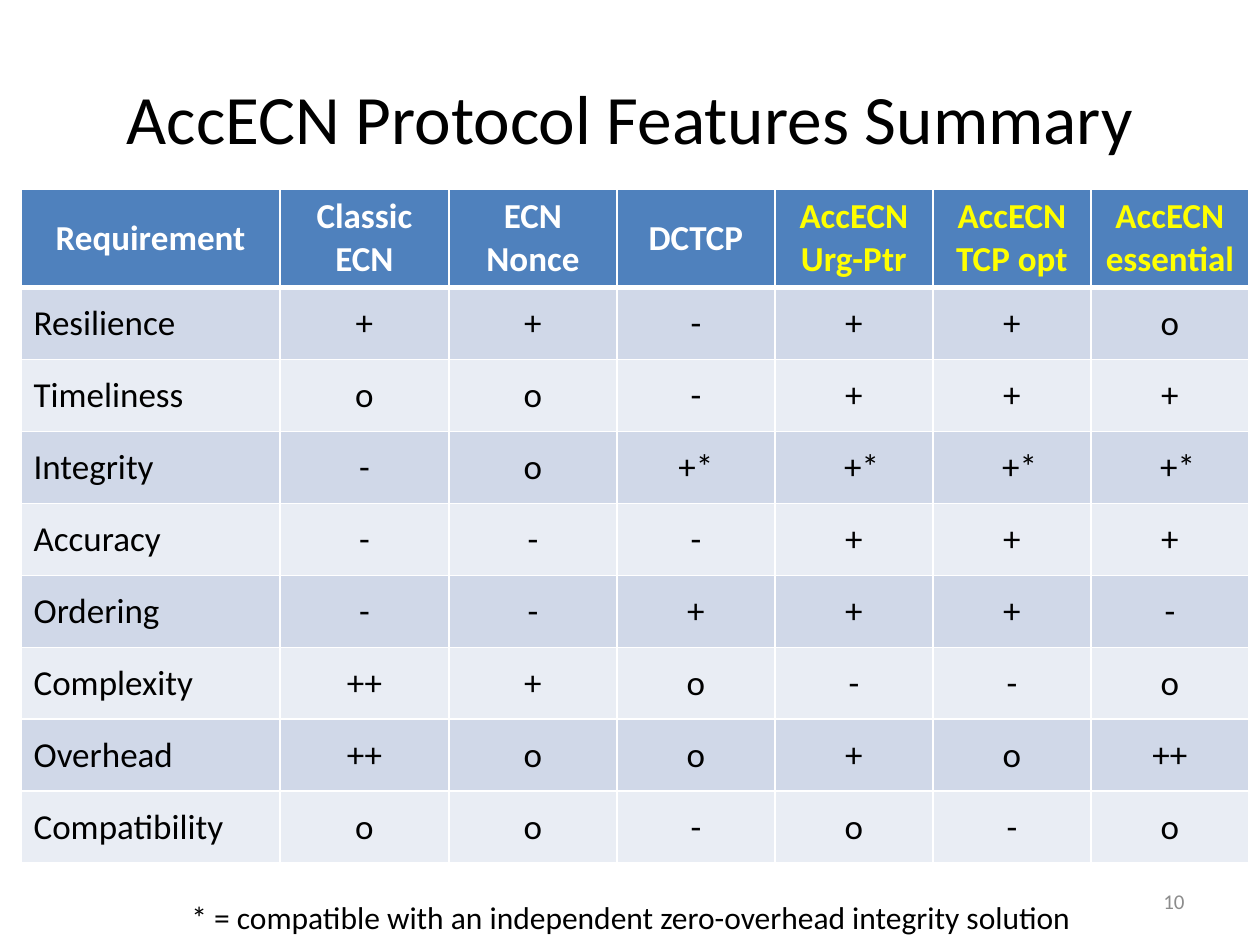
"""Build the AccECN protocol features summary slide."""
from lxml import etree
from pptx import Presentation
from pptx import util as u
from pptx.dml.color import RGBColor
from pptx.enum import text
from pptx.oxml.ns import qn

TITLE = "AccECN Protocol Features Summary"
FOOTNOTE = "* = compatible with an independent zero-overhead integrity solution"
PAGE_NUMBER = "10"
HEADINGS = ["Requirement", "Classic ECN", "ECN Nonce", "DCTCP",
            "AccECN\vUrg-Ptr", "AccECN\vTCP opt", "AccECN\vessential"]
RATINGS = [
    ("Resilience", "+", "+", "-", "+", "+", "o"),
    ("Timeliness", "o", "o", "-", "+", "+", "+"),
    ("Integrity", "-", "o", "+*", "+*", "+*", "+*"),
    ("Accuracy", "-", "-", "-", "+", "+", "+"),
    ("Ordering", "-", "-", "+", "+", "+", "-"),
    ("Complexity", "++", "+", "o", "-", "-", "o"),
    ("Overhead", "++", "o", "o", "+", "o", "++"),
    ("Compatibility", "o", "o", "-", "o", "-", "o"),
]
COLUMN_WIDTHS = [259, 169, 168] + [158] * 4
HEADING_HEIGHT, RATING_HEIGHT = 98, 72
FIRST_ACCECN = 4
STARRED_INDENT = 28

BLACK = RGBColor(0x00, 0x00, 0x00)
WHITE = RGBColor(0xFF, 0xFF, 0xFF)
YELLOW = RGBColor(0xFF, 0xFF, 0x00)
GREY = RGBColor(0x8C, 0x8C, 0x8C)
BLUE = RGBColor(0x4F, 0x81, 0xBD)
BANDS = [RGBColor(0xD0, 0xD8, 0xE8), RGBColor(0xE9, 0xED, 0xF4)]

LEFT, CENTER, RIGHT = (text.PP_ALIGN.LEFT, text.PP_ALIGN.CENTER,
                       text.PP_ALIGN.RIGHT)
MIDDLE = text.MSO_ANCHOR.MIDDLE


def px(*lengths):
    return [u.Emu(round(length * 914400 / 126)) for length in lengths]


def write(frame, words, size=20, color=BLACK, bold=False, align=LEFT):
    paragraph = frame.paragraphs[0]
    paragraph.text = words
    paragraph.alignment = align
    for run in paragraph.runs:
        run.font.name = "Calibri"
        run.font.size = u.Pt(size)
        run.font.bold = bold
        run.font.color.rgb = color


def add_borders(cell, **points):
    properties = cell._tc.get_or_add_tcPr()
    for side in "LRTB":
        line = etree.SubElement(properties, qn(f"a:ln{side}"),
                                w=str(u.Pt(points.get(side, 1))))
        fill = etree.SubElement(line, qn("a:solidFill"))
        etree.SubElement(fill, qn("a:srgbClr"), val=str(WHITE))


def add_ratings(slide):
    heights = [HEADING_HEIGHT] + [RATING_HEIGHT] * len(RATINGS)
    table = slide.shapes.add_table(
        len(heights), len(HEADINGS),
        *px(21, 189, sum(COLUMN_WIDTHS), sum(heights))).table
    for column, width in zip(table.columns, px(*COLUMN_WIDTHS)):
        column.width = width
    for row, height in zip(table.rows, px(*heights)):
        row.height = height
    for r, entries in enumerate([HEADINGS] + RATINGS):
        for c, entry in enumerate(entries):
            cell = table.cell(r, c)
            cell.vertical_anchor = MIDDLE
            add_borders(cell, T=3 if r == 1 else 1, B=3 if r == 0 else 1)
            cell.fill.solid()
            cell.fill.fore_color.rgb = BANDS[(r - 1) % 2] if r else BLUE
            if r == 0:
                write(cell.text_frame, entry, bold=True, align=CENTER,
                      color=YELLOW if c >= FIRST_ACCECN else WHITE)
            else:
                write(cell.text_frame, entry, align=CENTER if c else LEFT)
            if entry == "+*" and c >= FIRST_ACCECN:
                cell.margin_left, = px(STARRED_INDENT)


def main():
    deck = Presentation()
    deck.slide_width, deck.slide_height = px(1260, 945)
    slide = deck.slides.add_slide(deck.slide_layouts[5])

    title = slide.shapes.title
    title.left, title.top, title.width, title.height = px(63, 38, 1134, 157)
    title.text_frame.auto_size = text.MSO_AUTO_SIZE.NONE
    title.text_frame.vertical_anchor = MIDDLE
    write(title.text_frame, TITLE, size=39.6, align=CENTER)

    add_ratings(slide)

    footnote = slide.shapes.add_textbox(*px(179, 892, 908, 50)).text_frame
    footnote.word_wrap = False
    footnote.auto_size = text.MSO_AUTO_SIZE.SHAPE_TO_FIT_TEXT
    write(footnote, FOOTNOTE, size=18)

    page = slide.shapes.add_textbox(*px(903, 876, 294, 50)).text_frame
    page.word_wrap = True
    page.vertical_anchor = MIDDLE
    write(page, PAGE_NUMBER, size=12, color=GREY, align=RIGHT)

    deck.save("out.pptx")


if __name__ == "__main__":
    main()
